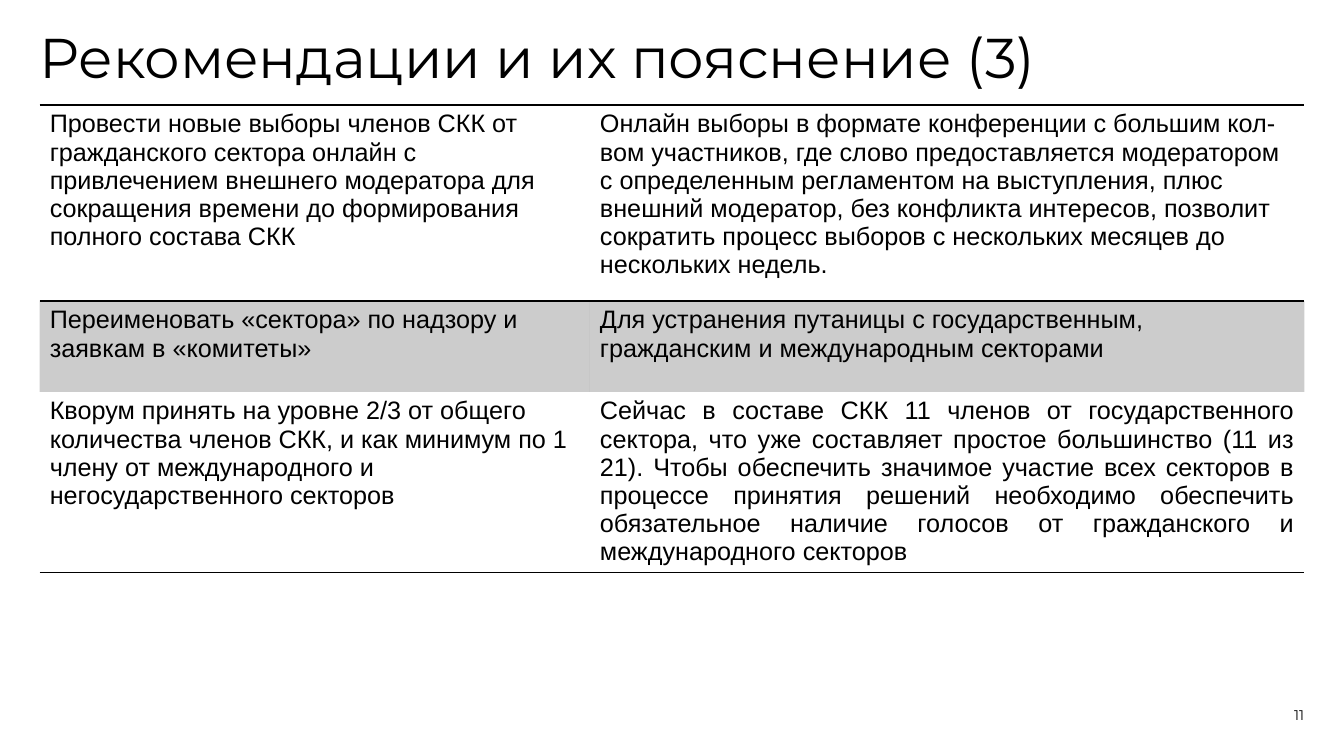
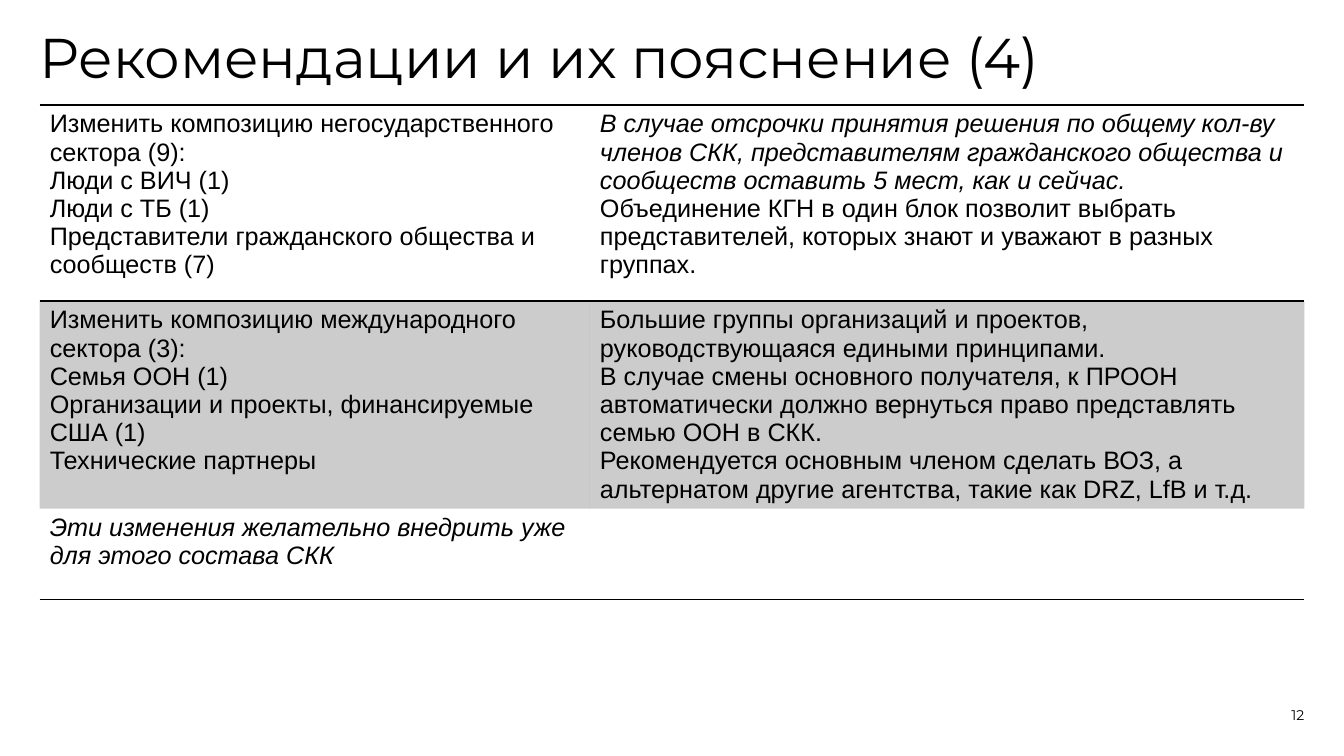
from dataclasses import dataclass

from lxml import etree
from pptx import Presentation
from pptx.dml.color import RGBColor
from pptx.enum.text import MSO_ANCHOR, MSO_AUTO_SIZE, PP_ALIGN
from pptx.oxml.ns import qn
from pptx.util import Pt

LEFT, RIGHT, JUSTIFY = PP_ALIGN.LEFT, PP_ALIGN.RIGHT, PP_ALIGN.JUSTIFY
TOP, BOTTOM = MSO_ANCHOR.TOP, MSO_ANCHOR.BOTTOM

# Shared look, lengths in points
COLORS = {"ink": "000000", "band": "000000"}
BAND_OPACITY = 20
HEADING_FONT, TABLE_FONT = "Montserrat", "Arial"
PAGE_WIDTH, PAGE_HEIGHT = 960, 540
MARGIN = 28.35
CONTENT_WIDTH = PAGE_WIDTH - 2 * MARGIN
TITLE_TOP, TABLE_TOP = 21.6, 75
FIRST_COLUMN = 393
RULE_WIDTH = 1
TITLE_ONLY = 5
NO_GRID_STYLE = "{2D5ABB26-0587-4C30-8999-92F81FD0307C}"


@dataclass
class Entry:
    """One paragraph of a table cell."""
    text: str
    italic: bool = False
    align: PP_ALIGN = LEFT


# Each slide: title, number, row heights, rows of cells
SLIDES = [
    ("Рекомендации и их пояснение (3)", 11, (140, 65, 129), [
        ([Entry("Провести новые выборы членов СКК от гражданского сектора онлайн с "
                "привлечением внешнего модератора для сокращения времени до "
                "формирования полного состава СКК")],
         [Entry("Онлайн выборы в формате конференции с большим кол-вом участников, "
                "где слово предоставляется модератором с определенным регламентом на "
                "выступления, плюс внешний модератор, без конфликта интересов, "
                "позволит сократить процесс выборов с нескольких месяцев до "
                "нескольких недель.")]),
        ([Entry("Переименовать «сектора» по надзору и заявкам в «комитеты»")],
         [Entry("Для устранения путаницы с государственным, гражданским и "
                "международным секторами")]),
        ([Entry("Кворум принять на уровне 2/3 от общего количества членов СКК, и как "
                "минимум по 1 члену от международного и негосударственного секторов")],
         [Entry("Сейчас в составе СКК 11 членов от государственного сектора, что уже "
                "составляет простое большинство (11 из 21). Чтобы обеспечить значимое "
                "участие всех секторов в процессе принятия решений необходимо "
                "обеспечить обязательное наличие голосов от гражданского и "
                "международного секторов", align=JUSTIFY)]),
    ]),
    ("Рекомендации и их пояснение (4)", 12, (140, 148, 65), [
        ([Entry("Изменить композицию негосударственного сектора (9):"),
          Entry("Люди с ВИЧ (1)"),
          Entry("Люди с ТБ (1)"),
          Entry("Представители гражданского общества и сообществ (7)")],
         [Entry("В случае отсрочки принятия решения по общему кол-ву членов СКК, "
                "представителям гражданского общества и сообществ оставить 5 мест, "
                "как и сейчас.", italic=True),
          Entry("Объединение КГН в один блок позволит выбрать представителей, которых "
                "знают и уважают в разных группах.")]),
        ([Entry("Изменить композицию международного сектора (3):"),
          Entry("Семья ООН (1)"),
          Entry("Организации и проекты, финансируемые США (1)"),
          Entry("Технические партнеры")],
         [Entry("Большие группы организаций и проектов, руководствующаяся едиными "
                "принципами."),
          Entry("В случае смены основного получателя, к ПРООН автоматически должно "
                "вернуться право представлять семью ООН в СКК."),
          Entry("Рекомендуется основным членом сделать ВОЗ, а альтернатом другие "
                "агентства, такие как DRZ, LfB и т.д.")]),
        ([Entry("Эти изменения желательно внедрить уже для этого состава СКК",
                italic=True)],
         []),
    ]),
]


def add_span(para, text, font, size, italic=False):
    span = para.add_run()
    span.text = text
    span.font.name = font
    span.font.size = Pt(size)
    span.font.italic = italic
    span.font.color.rgb = RGBColor.from_string(COLORS["ink"])


def set_frame(box, left, top, width, height, anchor):
    """Place a box and give its text no inner margins."""
    box.left, box.top, box.width, box.height = map(Pt, (left, top, width, height))
    frame = box.text_frame
    frame.word_wrap = True
    frame.auto_size = MSO_AUTO_SIZE.NONE
    frame.vertical_anchor = anchor
    frame.margin_left = frame.margin_right = frame.margin_top = frame.margin_bottom = 0
    return frame.paragraphs[0]


def add_title(page, text):
    para = set_frame(page.shapes.title, MARGIN, TITLE_TOP, CONTENT_WIDTH,
                     TABLE_TOP - TITLE_TOP, TOP)
    para.alignment = LEFT
    para.line_spacing = 0.9
    add_span(para, text, HEADING_FONT, 40)


def add_page_number(page, number):
    width, height = 70.6, 28.8
    left, top = PAGE_WIDTH - MARGIN - width, 488.2
    box = page.shapes.add_textbox(Pt(left), Pt(top), Pt(width), Pt(height))
    para = set_frame(box, left, top, width, height, BOTTOM)
    para.alignment = RIGHT
    add_span(para, str(number), HEADING_FONT, 10)


def add_rule(cell, edge):
    """Draw one cell border; edge is lnT or lnB."""
    line = etree.SubElement(cell._tc.get_or_add_tcPr(), qn(f"a:{edge}"),
                            w=str(Pt(RULE_WIDTH)))
    fill = etree.SubElement(line, qn("a:solidFill"))
    etree.SubElement(fill, qn("a:srgbClr"), val=COLORS["ink"])


def fill_band(cell):
    cell.fill.solid()
    cell.fill.fore_color.rgb = RGBColor.from_string(COLORS["band"])
    color = cell._tc.tcPr.find(f".//{qn('a:solidFill')}/{qn('a:srgbClr')}")
    etree.SubElement(color, qn("a:alpha"), val=str(BAND_OPACITY * 1000))


def write_cell(cell, entries):
    for index, entry in enumerate(entries):
        frame = cell.text_frame
        para = frame.add_paragraph() if index else frame.paragraphs[0]
        para.alignment = entry.align
        add_span(para, entry.text, TABLE_FONT, 18, entry.italic)


def add_recommendations(page, heights, rows):
    frame = page.shapes.add_table(len(rows), 2, Pt(MARGIN), Pt(TABLE_TOP),
                                  Pt(CONTENT_WIDTH), Pt(sum(heights)))
    table = frame.table
    table.first_row = table.horz_banding = False
    table._tbl.tblPr.find(qn("a:tableStyleId")).text = NO_GRID_STYLE
    for column, width in zip(table.columns, (FIRST_COLUMN, CONTENT_WIDTH - FIRST_COLUMN)):
        column.width = Pt(width)

    last = len(rows) - 1
    for index, (height, contents) in enumerate(zip(heights, rows)):
        table.rows[index].height = Pt(height)
        for cell, entries in zip(table.rows[index].cells, contents):
            write_cell(cell, entries)
            # Rules frame the first row and close the table
            if index == 0:
                add_rule(cell, "lnT")
            if index in (0, last):
                add_rule(cell, "lnB")
            # Every second row is shaded
            if index % 2:
                fill_band(cell)
            else:
                cell.fill.background()


def main():
    deck = Presentation()
    deck.slide_width, deck.slide_height = Pt(PAGE_WIDTH), Pt(PAGE_HEIGHT)
    for title, number, heights, rows in SLIDES:
        page = deck.slides.add_slide(deck.slide_layouts[TITLE_ONLY])
        add_title(page, title)
        add_page_number(page, number)
        add_recommendations(page, heights, rows)
    deck.save("out.pptx")


if __name__ == "__main__":
    main()
